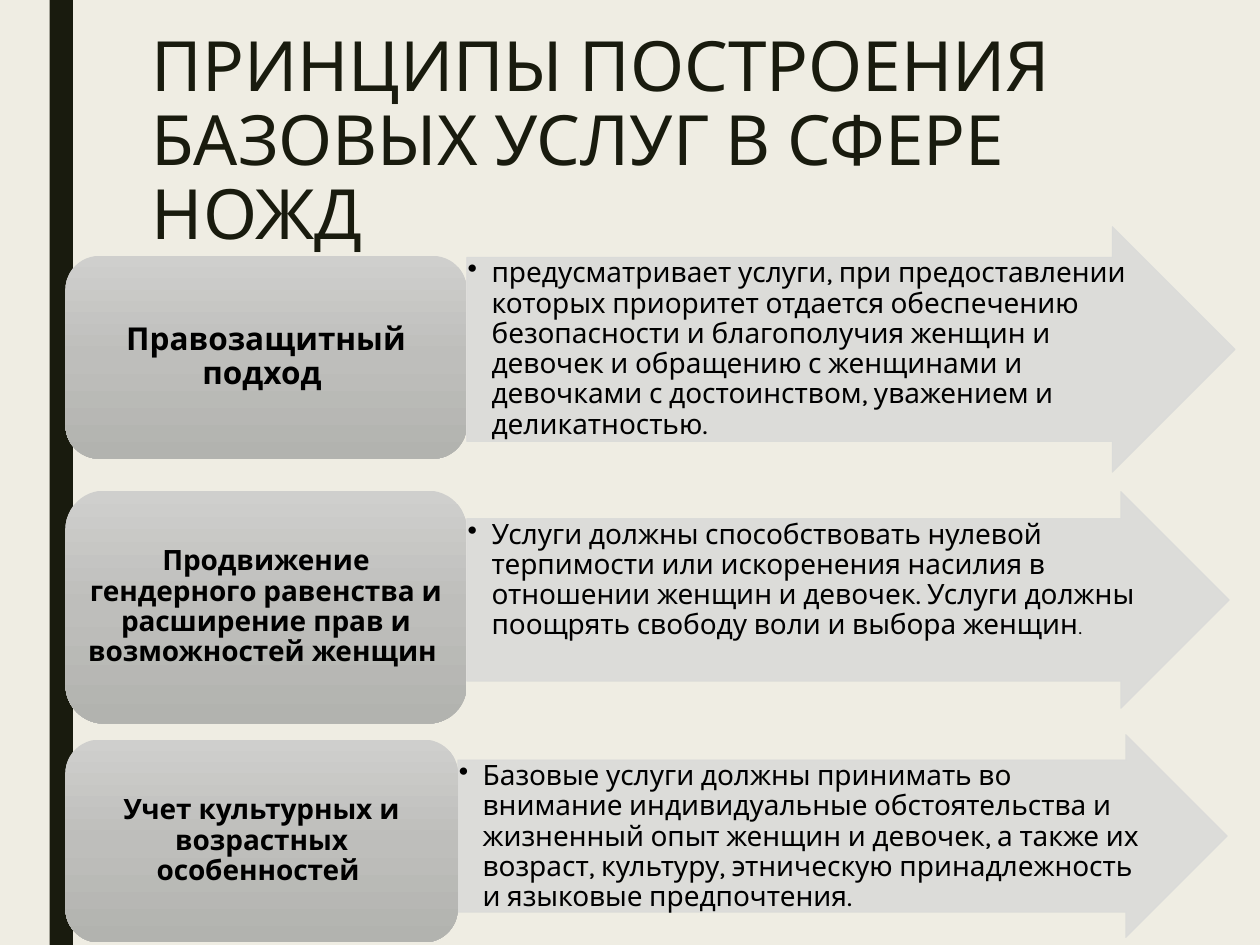
from lxml import etree
from pptx import Presentation
from pptx.dml.color import RGBColor
from pptx.enum.shapes import MSO_SHAPE
from pptx.enum.text import MSO_ANCHOR, MSO_AUTO_SIZE, PP_ALIGN
from pptx.oxml.ns import qn
from pptx.util import Cm, Pt

TOP, MIDDLE = MSO_ANCHOR.TOP, MSO_ANCHOR.MIDDLE
LEFT, CENTER = PP_ALIGN.LEFT, PP_ALIGN.CENTER
FONT = "Karla"
COLORS = {"background": "EFEDE3", "dark": "191B0E", "arrow": "DADBD9", "text": "000000"}
BOX_GRADIENT = [(0, "CFCFCD"), (50, "BEBEBB"), (100, "B2B3AF")]

TITLE = "ПРИНЦИПЫ ПОСТРОЕНИЯ БАЗОВЫХ УСЛУГ В СФЕРЕ НОЖД"
# Box and arrow sizes are in cm: (top, width, height); the arrow starts where the box ends.
BOX_LEFT = 1.32
PRINCIPLES = [
    {"name": "Правозащитный подход ", "name_size": 18,
     "box": (5.16, 8.09, 4.09), "arrow": (4.57, 15.49, 4.95),
     "details": [("предусматривает услуги, при предоставлении которых приоритет отдается "
                  "обеспечению безопасности и благополучия женщин и девочек и обращению с "
                  "женщинами и девочками с достоинством, уважением и деликатностью.", 16)]},
    {"name": "Продвижение гендерного равенства и расширение прав и возможностей женщин ",
     "name_size": 16,
     "box": (9.89, 8.09, 4.7), "arrow": (9.91, 15.37, 4.37),
     "details": [("Услуги должны способствовать нулевой терпимости или искоренения насилия в "
                  "отношении женщин и девочек. Услуги должны поощрять свободу воли и выбора "
                  "женщин", 16), (".", 11)]},
    {"name": "Учет культурных и возрастных особенностей ", "name_size": 16,
     "box": (14.91, 7.91, 4.09), "arrow": (14.81, 15.51, 4.09),
     "details": [("Базовые услуги должны принимать во внимание индивидуальные обстоятельства и "
                  "жизненный опыт женщин и девочек, а также их возраст, культуру, этническую "
                  "принадлежность и языковые предпочтения.", 16)]},
]


def set_attributes(target, values):
    for name, value in values.items():
        setattr(target, name, value)


def write_text(shape, runs, color, alignment, anchor, margins, spacing=0.9, bold=False):
    """Fill the shape with one paragraph; margins are horizontal and vertical in cm."""
    frame = shape.text_frame
    horizontal, vertical = map(Cm, margins)
    set_attributes(frame, {
        "word_wrap": True, "auto_size": MSO_AUTO_SIZE.NONE, "vertical_anchor": anchor,
        "margin_left": horizontal, "margin_right": horizontal,
        "margin_top": vertical, "margin_bottom": vertical})
    paragraph = frame.paragraphs[0]
    set_attributes(paragraph, {"alignment": alignment, "line_spacing": spacing})
    for text, size in runs:
        run = paragraph.add_run()
        run.text = text
        set_attributes(run.font, {"name": FONT, "size": Pt(size), "bold": bold})
        run.font.color.rgb = RGBColor.from_string(COLORS[color])
    return paragraph


def add_bare_shape(slide, kind, left, top, width, height):
    shape = slide.shapes.add_shape(kind, Cm(left), Cm(top), Cm(width), Cm(height))
    shape.shadow.inherit = False
    shape.line.fill.background()
    return shape


def add_bullet(paragraph, indent):
    properties = paragraph._p.get_or_add_pPr()
    properties.set("marL", str(Cm(indent)))
    properties.set("indent", str(-Cm(indent)))
    etree.SubElement(properties, qn("a:buChar")).set("char", "•")


def add_arrow(slide, left, size, details):
    top, width, height = size
    arrow = add_bare_shape(slide, MSO_SHAPE.RIGHT_ARROW, left, top, width, height)
    arrow.adjustments[0], arrow.adjustments[1] = 0.75, 0.5
    arrow.line.width = Pt(0.5)
    for fill in (arrow.fill, arrow.line.fill):
        fill.solid()
        fill.fore_color.rgb = RGBColor.from_string(COLORS["arrow"])
    for color in arrow._element.spPr.iter(qn("a:srgbClr")):
        etree.SubElement(color, qn("a:alpha")).set("val", "90000")
    add_bullet(write_text(arrow, details, "text", LEFT, TOP, (0.02, 0.03)), 0.48)


def add_box(slide, size, name, name_size):
    top, width, height = size
    box = add_bare_shape(slide, MSO_SHAPE.ROUNDED_RECTANGLE, BOX_LEFT, top, width, height)
    box.fill.gradient()
    box.fill.gradient_angle = 270
    stops = box._element.spPr.find(".//" + qn("a:gsLst"))
    for stop in list(stops):
        stops.remove(stop)
    for position, color in BOX_GRADIENT:
        stop = etree.SubElement(stops, qn("a:gs"))
        stop.set("pos", str(position * 1000))
        etree.SubElement(stop, qn("a:srgbClr")).set("val", color)
    write_text(box, [(name, name_size)], "text", CENTER, MIDDLE, (0.17, 0.09), bold=True)


def main():
    presentation = Presentation()
    set_attributes(presentation, {"slide_width": Cm(25.4), "slide_height": Cm(19.05)})
    slide = presentation.slides.add_slide(presentation.slide_layouts[5])
    slide.background.fill.solid()
    slide.background.fill.fore_color.rgb = RGBColor.from_string(COLORS["background"])

    bar = add_bare_shape(slide, MSO_SHAPE.RECTANGLE, 1, 0, 0.47, 19.05)
    bar.fill.solid()
    bar.fill.fore_color.rgb = RGBColor.from_string(COLORS["dark"])

    title = slide.shapes.title
    set_attributes(title, {"left": Cm(2.81), "top": Cm(0.53),
                           "width": Cm(21.23), "height": Cm(4.11)})
    write_text(title, [(TITLE, 39.6)], "dark", LEFT, TOP, (0.25, 0.13), spacing=0.89)

    for principle in PRINCIPLES:
        arrow_left = BOX_LEFT + principle["box"][1]
        add_arrow(slide, arrow_left, principle["arrow"], principle["details"])
        add_box(slide, principle["box"], principle["name"], principle["name_size"])

    presentation.save("out.pptx")


if __name__ == "__main__":
    main()
